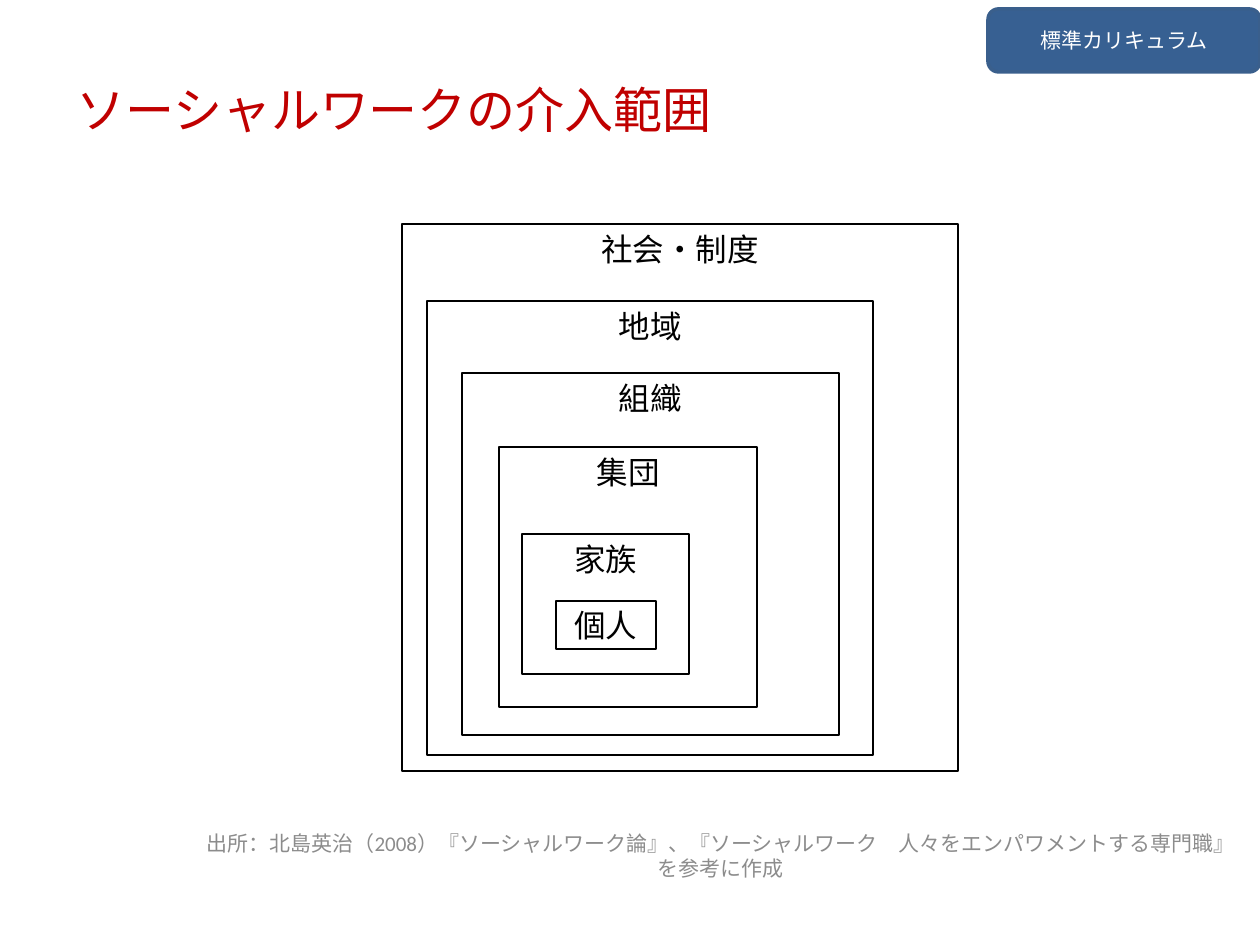
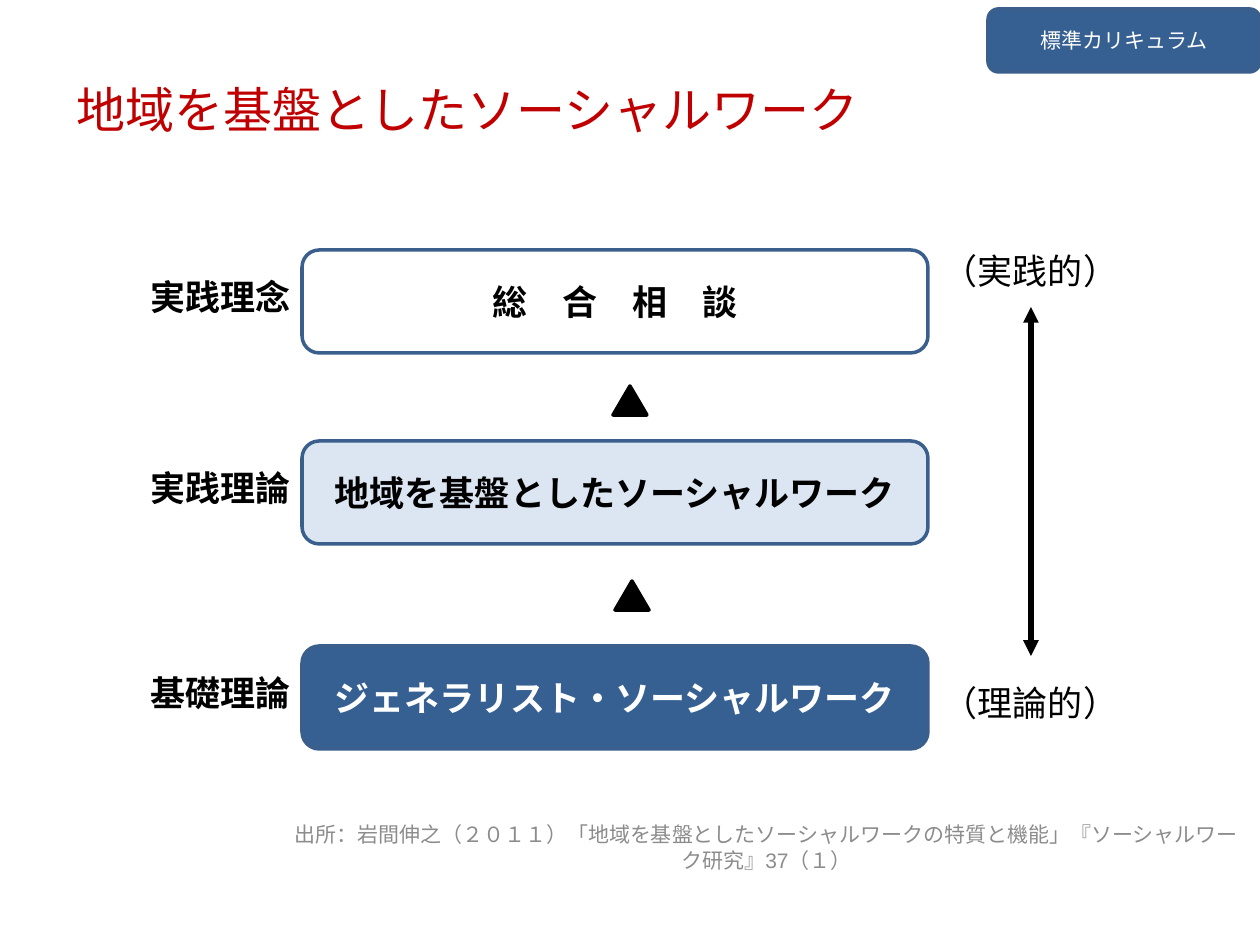
from pptx import Presentation
from pptx import util as u
from pptx.dml.color import RGBColor
from pptx.enum import shapes, text
from pptx.oxml.ns import qn
from lxml import etree

SCALE = 914400 / 126
GOTHIC = "Noto Sans CJK JP"
BLACK, WHITE, RED, GRAY = "000000", "FFFFFF", "C00000", "8C8C8C"
NAVY, EDGE, PALE = "376092", "3A5F8C", "DCE6F2"
RECT = shapes.MSO_SHAPE.RECTANGLE
ROUND = shapes.MSO_SHAPE.ROUNDED_RECTANGLE
TRIANGLE = shapes.MSO_SHAPE.ISOSCELES_TRIANGLE
TOP, MIDDLE = text.MSO_ANCHOR.TOP, text.MSO_ANCHOR.MIDDLE
LEFT, CENTER = text.PP_ALIGN.LEFT, text.PP_ALIGN.CENTER


def px(*sizes):
    return [u.Emu(round(size * SCALE)) for size in sizes]


def color(code):
    return RGBColor.from_string(code)


def write(shape, words, size=20, font=GOTHIC, ink=BLACK, bold=False,
          align=CENTER, anchor=MIDDLE):
    frame = shape.text_frame
    frame.word_wrap = True
    frame.vertical_anchor = anchor
    para = frame.paragraphs[0]
    para.alignment = align
    run = para.add_run()
    run.text = words
    run.font.size = u.Pt(size)
    run.font.bold = bold
    run.font.color.rgb = color(ink)
    run.font.name = font
    etree.SubElement(run.font._element, qn("a:ea"), typeface=GOTHIC)


def label(slide, box, words, **style):
    write(slide.shapes.add_textbox(*px(*box)), words, **style)


def block(slide, kind, box, fill, line=EDGE, width=2):
    shape = slide.shapes.add_shape(kind, *px(*box))
    shape.shadow.inherit = False
    shape.fill.solid()
    shape.fill.fore_color.rgb = color(fill)
    shape.line.color.rgb = color(line)
    shape.line.width = u.Pt(width)
    return shape


def arrow(slide, x, top, bottom):
    line = slide.shapes.add_connector(
        shapes.MSO_CONNECTOR.STRAIGHT, *px(x, top, x, bottom))
    line.line.color.rgb = color(BLACK)
    line.line.width = u.Pt(3)
    stroke = line.line._get_or_add_ln()
    for end in ("a:headEnd", "a:tailEnd"):
        etree.SubElement(stroke, qn(end), type="triangle")
    etree.SubElement(line._element.spPr, qn("a:effectLst"))


def page(deck, title, source, box, font):
    slide = deck.slides.add_slide(deck.slide_layouts[6])
    label(slide, (64, 73, 1191, 72), title, size=28, ink=RED,
          align=LEFT, anchor=TOP)
    badge = block(slide, ROUND, (988, 9, 272, 63), NAVY)
    write(badge, "標準カリキュラム", size=12, font="Calibri", ink=WHITE)
    label(slide, box, source, size=12, font=font, ink=GRAY)
    return slide


def nest(slide, left, top):
    frames = [
        ("社会・制度", 0, 0, 556, 547),
        ("地域", 25, 77, 446, 454),
        ("組織", 60, 149, 377, 362),
        ("集団", 97, 223, 258, 260),
        ("家族", 120, 310, 167, 140),
        ("個人", 154, 377, 100, 48),
    ]
    for name, x, y, wide, high in frames:
        frame = block(slide, RECT, (left + x, top + y, wide, high),
                      WHITE, BLACK, 0.75)
        write(frame, name, size=18,
              anchor=MIDDLE if name == "個人" else TOP)


def tiers(slide, left, top):
    rows = [
        (0, "実践理念", "総　合　相　談", WHITE, BLACK),
        (191, "実践理論", "地域を基盤としたソーシャルワーク", PALE, BLACK),
        (396, "基礎理論", "ジェネラリスト・ソーシャルワーク", NAVY, WHITE),
    ]
    for y, name, words, fill, ink in rows:
        bar = block(slide, ROUND, (left + 176, top + y, 626, 103), fill)
        write(bar, words, ink=ink, bold=True)
        label(slide, (left, top + y - 16, 189, 125), name, bold=True)
    for x, y in ((487, 136), (489, 331)):
        block(slide, TRIANGLE, (left + x, top + y, 34, 29), BLACK, BLACK)


def axis(slide, left, top):
    for y, name in ((0, "（実践的）"), (432, "（理論的）")):
        label(slide, (left, top + y, 207, 125), name)
    arrow(slide, left + 104, top + 99, top + 448)


def main():
    deck = Presentation()
    deck.slide_width, deck.slide_height = px(1260, 945)
    scope = page(
        deck, "ソーシャルワークの介入範囲",
        "出所：北島英治（2008）『ソーシャルワーク論』、『ソーシャルワーク　"
        "人々をエンパワメントする専門職』を参考に作成",
        (184, 831, 1074, 50), "Calibri")
    nest(scope, 402, 224)
    base = page(
        deck, "地域を基盤としたソーシャルワーク",
        "出所：岩間伸之（２０１１）「地域を基盤としたソーシャルワークの"
        "特質と機能」『ソーシャルワーク研究』37（１）",
        (273, 824, 987, 46), "Arial")
    tiers(base, 126, 250)
    axis(base, 927, 208)
    deck.save("out.pptx")


if __name__ == "__main__":
    main()
